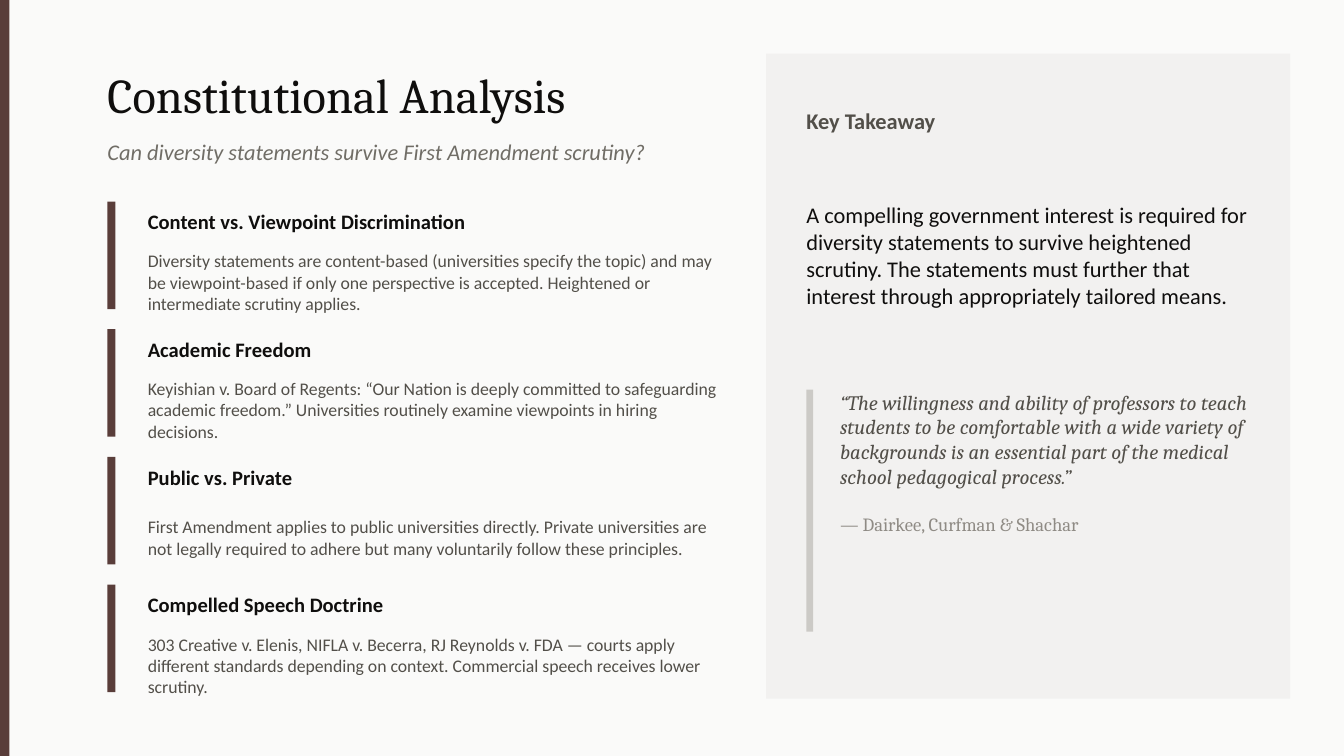
"""Build the Constitutional Analysis slide."""
from pptx import Presentation
from pptx.dml.color import RGBColor
from pptx.enum.shapes import MSO_SHAPE as SHAPE
from pptx.enum.text import MSO_ANCHOR as ANCHOR
from pptx.util import Pt

INK, BODY, MUTED, FAINT = "0F0E0D", "524F49", "706D66", "8F8B85"
ACCENT, PANEL, RULE, PAPER = "593D3A", "F2F1F0", "CCCAC6", "FAFAF9"
SANS, SERIF = "Calibri", "Cambria"
W, H = 720, 405

TITLE = "Constitutional Analysis"
SUBTITLE = "Can diversity statements survive First Amendment scrutiny?"
POINTS = [
    ("Content vs. Viewpoint Discrimination",
     "Diversity statements are content-based (universities specify the topic) and may be "
     "viewpoint-based if only one perspective is accepted. Heightened or intermediate "
     "scrutiny applies."),
    ("Academic Freedom",
     "Keyishian v. Board of Regents: “Our Nation is deeply committed to safeguarding "
     "academic freedom.” Universities routinely examine viewpoints in hiring decisions."),
    ("Public vs. Private",
     "First Amendment applies to public universities directly. Private universities are "
     "not legally required to adhere but many voluntarily follow these principles."),
    ("Compelled Speech Doctrine",
     "303 Creative v. Elenis, NIFLA v. Becerra, RJ Reynolds v. FDA — courts apply different "
     "standards depending on context. Commercial speech receives lower scrutiny."),
]
TAKEAWAY_HEAD = "Key Takeaway"
TAKEAWAY = ("A compelling government interest is required for diversity statements to survive "
            "heightened scrutiny. The statements must further that interest through "
            "appropriately tailored means.")
QUOTE = ("“The willingness and ability of professors to teach students to be comfortable with "
         "a wide variety of backgrounds is an essential part of the medical school "
         "pedagogical process.”")
SOURCE = "— Dairkee, Curfman & Shachar"


def rgb(color):
    return RGBColor.from_string(color)


def add_rect(s, x, y, w, h, color):
    sp = s.shapes.add_shape(SHAPE.RECTANGLE, Pt(x), Pt(y), Pt(w), Pt(h))
    sp.shadow.inherit = False
    sp.fill.solid()
    sp.fill.fore_color.rgb = rgb(color)
    sp.line.fill.background()


def add_run(p, text, size, color, font=SANS, bold=False, italic=False):
    r = p.add_run()
    r.text = text
    f = r.font
    f.size, f.name, f.bold, f.italic = Pt(size), font, bold, italic
    f.color.rgb = rgb(color)


def add_box(s, x, y, w, h, anchor=ANCHOR.MIDDLE):
    tf = s.shapes.add_textbox(Pt(x), Pt(y), Pt(w), Pt(h)).text_frame
    tf.word_wrap = True
    tf.vertical_anchor = anchor
    tf.margin_left = tf.margin_right = tf.margin_top = tf.margin_bottom = 0
    return tf


def add_line(s, x, y, w, h, *run, **style):
    add_run(add_box(s, x, y, w, h).paragraphs[0], *run, **style)


def add_points(s, x, top, pitch):
    for i, (head, body) in enumerate(POINTS):
        y = top + i * pitch
        add_rect(s, x, y, 4.32, 57.6, ACCENT)
        add_line(s, x + 21.6, y, 309.6, 21.6, head, 11, INK, bold=True)
        add_line(s, x + 21.6, y + 21.6, 309.6, 43.2, body, 9.5, BODY)


def add_takeaway(s, x):
    add_rect(s, x - 21.6, 28.8, 280.8, 345.6, PANEL)
    add_line(s, x, 50.4, 237.6, 28.8, TAKEAWAY_HEAD, 12, BODY, bold=True)
    add_line(s, x, 86.4, 237.6, 100.8, TAKEAWAY, 12, INK)
    add_rect(s, x, 208.8, 3.6, 129.6, RULE)
    tf = add_box(s, x + 18, 208.8, 219.6, 144, ANCHOR.TOP)
    add_run(tf.paragraphs[0], QUOTE, 11, BODY, SERIF, italic=True)
    p = tf.add_paragraph()
    p.space_before = Pt(13)
    add_run(p, SOURCE, 10, FAINT, SERIF)


def main():
    prs = Presentation()
    prs.slide_width, prs.slide_height = Pt(W), Pt(H)
    s = prs.slides.add_slide(prs.slide_layouts[6])
    s.background.fill.solid()
    s.background.fill.fore_color.rgb = rgb(PAPER)
    add_rect(s, 0, 0, 5.04, H, ACCENT)
    add_line(s, 57.6, 28.8, 360, 43.2, TITLE, 26, INK, SERIF)
    add_line(s, 57.6, 68.4, 360, 25.2, SUBTITLE, 12, MUTED, italic=True)
    add_points(s, 57.6, 108, 68.4)
    add_takeaway(s, 432)
    prs.save("out.pptx")


if __name__ == "__main__":
    main()
